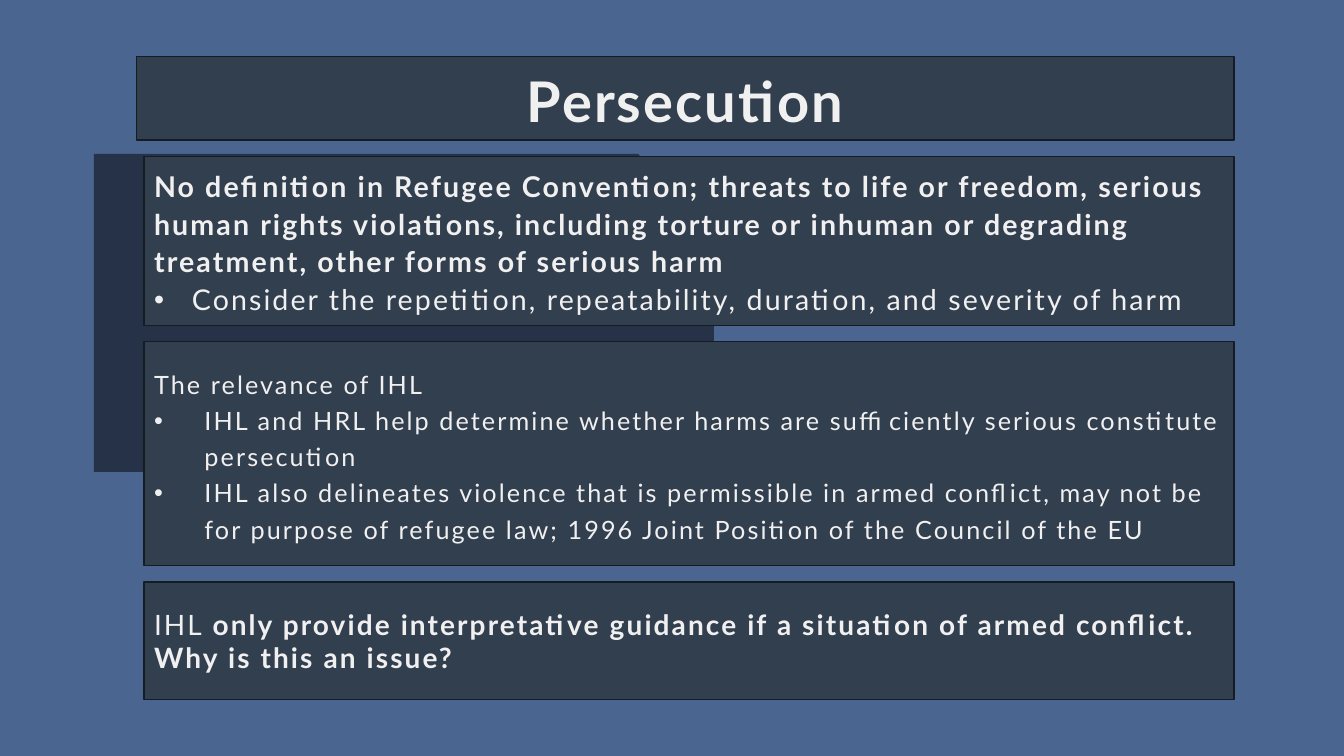
from lxml import etree
from pptx import Presentation
from pptx.dml.color import RGBColor
from pptx.enum import shapes, text
from pptx.oxml.ns import qn
from pptx.util import Pt


def color(fmt, code):
    """Give a fill or line format one solid colour."""
    fmt.solid()
    fmt.fore_color.rgb = RGBColor.from_string(code)


deck = Presentation()
deck.slide_width, deck.slide_height = Pt(960), Pt(540)
slide = deck.slides.add_slide(deck.slide_layouts[6])
color(slide.background.fill, "4A6590")

# Dark panel with a slanted corner behind the boxes
pen = slide.shapes.build_freeform(67, 110.2, scale=Pt(1))
pen.add_line_segments([(456.5, 110.2), (509.8, 186.5), (509.8, 337), (67, 337)])
panel = pen.convert_to_shape()
panel.shadow.inherit = False
color(panel.fill, "253248")
panel.line.fill.background()

MID, LOW = text.MSO_ANCHOR.MIDDLE, text.MSO_ANCHOR.BOTTOM
LEFT, CENTER = text.PP_ALIGN.LEFT, text.PP_ALIGN.CENTER

# Each paragraph is (bulleted, [(words, bold), ...])
boxes = [
    dict(left=97.5, top=40.2, high=59.8, size=40, gap=0.9, hang=0, anchor=LOW, align=CENTER,
         paras=[(False, [("Persecution", True)])]),
    dict(left=103, top=111.6, high=121, size=20.4, gap=1.1, hang=27, anchor=MID, align=LEFT,
         paras=[
             (False, [("No definition in Refugee Convention; threats to life or freedom, "
                       "serious human rights violations, including torture or inhuman or "
                       "degrading treatment, other forms of serious harm", True)]),
             (True, [("Consider the repetition, repeatability, duration, and severity "
                      "of harm", False)])]),
    dict(left=103, top=244, high=160, size=18, gap=1.2, hang=36, anchor=MID, align=LEFT,
         paras=[
             (False, [("The relevance of IHL", False)]),
             (True, [("IHL and HRL help determine whether harms are sufficiently serious "
                      "constitute persecution", False)]),
             (True, [("IHL also delineates violence that is permissible in armed conflict, "
                      "may not be for purpose of refugee law; 1996 Joint Position of the "
                      "Council of the EU", False)])]),
    dict(left=103, top=415.6, high=84, size=20, gap=1.0, hang=0, anchor=MID, align=LEFT,
         paras=[
             (False, [("IHL ", False),
                      ("only provide interpretative guidance if a situation of armed "
                       "conflict. Why is this an issue?", True)])]),
]
RIGHT = 881.4

for box in boxes:
    rect = slide.shapes.add_shape(
        shapes.MSO_SHAPE.RECTANGLE, Pt(box["left"]), Pt(box["top"]),
        Pt(RIGHT - box["left"]), Pt(box["high"]))
    rect.shadow.inherit = False
    color(rect.fill, "323F4F")
    color(rect.line.fill, "161C23")
    rect.line.width = Pt(1)
    frame = rect.text_frame
    frame.word_wrap = True
    frame.vertical_anchor = box["anchor"]
    for i, (dot, runs) in enumerate(box["paras"]):
        para = frame.add_paragraph() if i else frame.paragraphs[0]
        para.alignment = box["align"]
        para.line_spacing = box["gap"]
        if dot:
            props = para._p.get_or_add_pPr()
            props.set("marL", str(Pt(box["hang"])))
            props.set("indent", str(-Pt(box["hang"])))
            etree.SubElement(props, qn("a:buFont")).set("typeface", "Arial")
            etree.SubElement(props, qn("a:buChar")).set("char", "•")
        for words, bold in runs:
            run = para.add_run()
            run.text = words
            look = dict(name="Lato", size=Pt(box["size"]), bold=bold)
            for key, value in look.items():
                setattr(run.font, key, value)
            color(run.font.fill, "F1F0F0")
            run._r.get_or_add_rPr().set("spc", "150")

deck.save("out.pptx")
